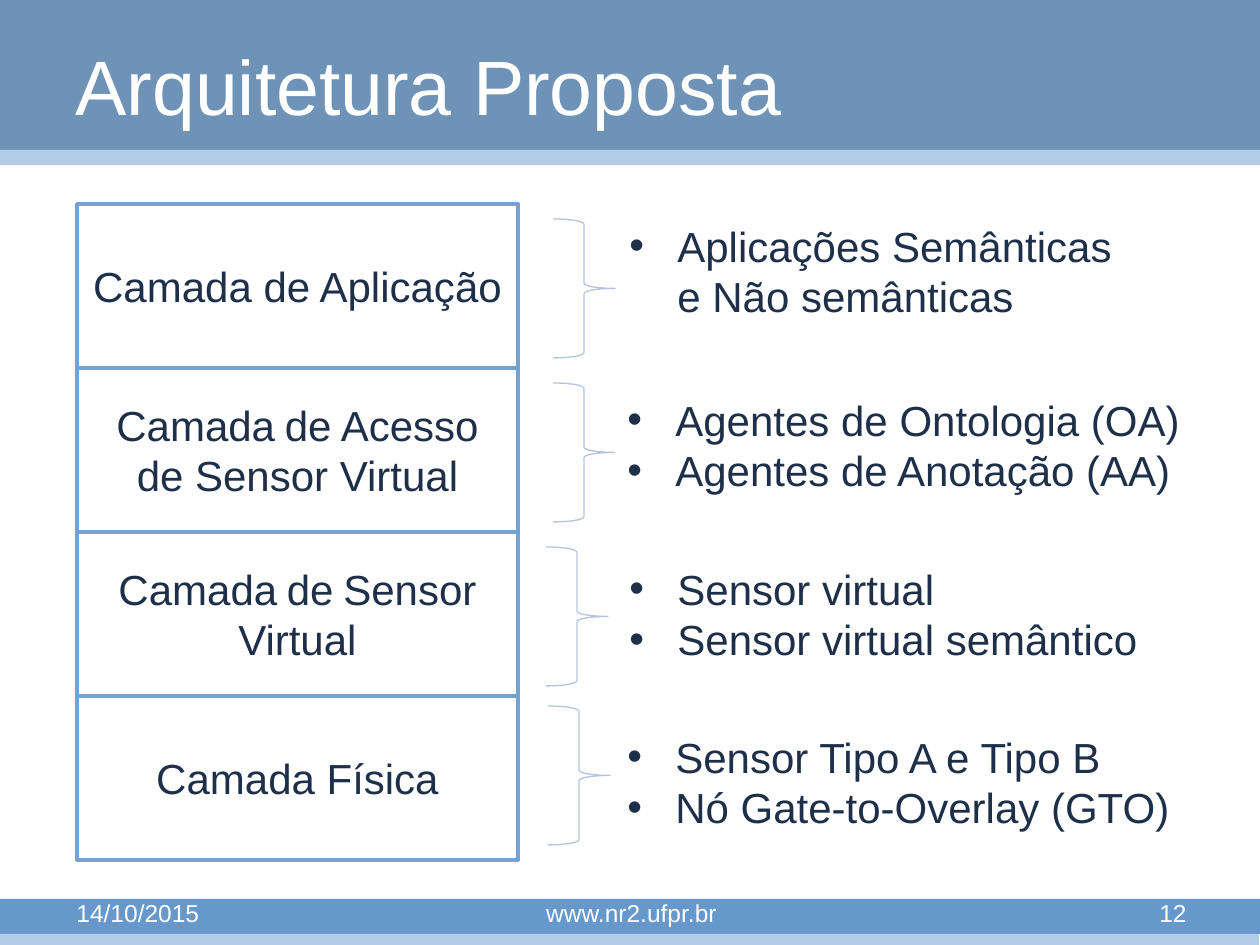
from dataclasses import dataclass

from lxml.etree import SubElement
from pptx import Presentation
from pptx.dml.color import RGBColor as Rgb
from pptx.enum.shapes import MSO_SHAPE as Shape
from pptx.enum.text import MSO_ANCHOR as Anchor, MSO_AUTO_SIZE as Fit, PP_ALIGN as Align
from pptx.oxml.ns import qn
from pptx.util import Emu, Pt

SCALE = 914400 / 126
FONT = "Arial"
HEX = {
    "head": "336599", "pale": "B3CCE6", "foot": "6698CC", "white": "FFFFFF",
    "edge": "75A2D1", "ink": "1E3049", "brace": "B3C5DE",
}


@dataclass
class Box:
    x: int
    y: int
    w: int
    h: int


@dataclass
class Band:
    box: Box
    fill: str
    alpha: int = 100


@dataclass
class Layer:
    name: str
    brace: Box
    notes: Box
    items: list[str]


@dataclass
class Label:
    text: str
    box: Box
    size: int
    align: Align
    anchor: Anchor


BANDS = [
    Band(Box(0, 0, 1260, 165), "head", 70),
    Band(Box(0, 150, 1260, 15), "pale"),
    Band(Box(0, 899, 1261, 35), "foot"),
    Band(Box(0, 934, 1259, 11), "pale"),
]
LABELS = [
    Label("Arquitetura Proposta", Box(63, 35, 1143, 100), 44, Align.LEFT, Anchor.MIDDLE),
    Label("14/10/2015", Box(64, 892, 295, 40), 14, Align.LEFT, Anchor.TOP),
    Label("www.nr2.ufpr.br", Box(432, 892, 399, 44), 14, Align.CENTER, Anchor.TOP),
    Label("12", Box(904, 892, 295, 44), 14, Align.RIGHT, Anchor.TOP),
]
LAYERS = [
    Layer("Camada de Aplicação", Box(553, 219, 62, 139), Box(617, 214, 519, 115),
          ["Aplicações Semânticas e Não semânticas"]),
    Layer("Camada~de Acesso de Sensor Virtual", Box(553, 383, 62, 139), Box(615, 388, 615, 115),
          ["Agentes de Ontologia (OA)", "Agentes de Anotação (AA)"]),
    Layer("Camada~de~Sensor~Virtual", Box(546, 547, 62, 139), Box(617, 557, 558, 115),
          ["Sensor virtual", "Sensor virtual semântico"]),
    Layer("Camada Física", Box(548, 706, 62, 139), Box(615, 725, 581, 115),
          ["Sensor Tipo A e Tipo B", "Nó Gate-to-Overlay (GTO)"]),
]
LEFT, TOP, WIDTH, STEP = 77, 204, 441, 164
INDENT = 48


def px(n: int) -> Emu:
    return Emu(round(n * SCALE))


def place(box: Box) -> tuple[Emu, ...]:
    return px(box.x), px(box.y), px(box.w), px(box.h)


def tint(name: str) -> Rgb:
    return Rgb.from_string(HEX[name])


def draw(slide, kind: Shape, box: Box, fill: str = "", line: str = "", width: float = 1):
    shape = slide.shapes.add_shape(kind, *place(box))
    shape.shadow.inherit = False
    if fill:
        shape.fill.solid()
        shape.fill.fore_color.rgb = tint(fill)
    else:
        shape.fill.background()
    if line:
        shape.line.color.rgb = tint(line)
        shape.line.width = Pt(width)
    else:
        shape.line.fill.background()
    return shape


def fade(shape, alpha: int) -> None:
    color = shape.fill._xPr.find(qn("a:solidFill"))[0]
    SubElement(color, qn("a:alpha")).set("val", str(alpha * 1000))


def dot(para) -> None:
    props = para._p.get_or_add_pPr()
    props.set("marL", str(px(INDENT)))
    props.set("indent", str(-px(INDENT)))
    SubElement(props, qn("a:buFont")).set("typeface", FONT)
    SubElement(props, qn("a:buChar")).set("char", "•")


def add_run(para, text: str, size: int, color: str) -> None:
    run = para.add_run()
    run.text = text
    run.font.name = FONT
    run.font.size = Pt(size)
    run.font.color.rgb = tint(color)


def write(shape, *lines: str, size: int = 24, color: str = "ink", align: Align = Align.LEFT,
          anchor: Anchor = Anchor.TOP, bullet: bool = False, grow: bool = False) -> None:
    frame = shape.text_frame
    frame.word_wrap = True
    frame.vertical_anchor = anchor
    if grow:
        frame.auto_size = Fit.SHAPE_TO_FIT_TEXT
    for i, line in enumerate(lines):
        para = frame.add_paragraph() if i else frame.paragraphs[0]
        para.alignment = align
        if bullet:
            dot(para)
        for j, part in enumerate(line.split("~")):
            if j:
                add_run(para, " ", 20, "pale")
            add_run(para, part, size, color)


def main() -> None:
    deck = Presentation()
    deck.slide_width, deck.slide_height = px(1260), px(945)
    slide = deck.slides.add_slide(deck.slide_layouts[6])
    for band in BANDS:
        shape = draw(slide, Shape.RECTANGLE, band.box, fill=band.fill)
        if band.alpha < 100:
            fade(shape, band.alpha)
    for label in LABELS:
        write(slide.shapes.add_textbox(*place(label.box)), label.text, size=label.size,
              color="white", align=label.align, anchor=label.anchor)
    for i, layer in enumerate(LAYERS):
        box = Box(LEFT, TOP + i * STEP, WIDTH, STEP)
        card = draw(slide, Shape.RECTANGLE, box, fill="white", line="edge", width=2)
        write(card, layer.name, align=Align.CENTER, anchor=Anchor.MIDDLE)
        draw(slide, Shape.RIGHT_BRACE, layer.brace, line="brace", width=0.75)
        write(slide.shapes.add_textbox(*place(layer.notes)), *layer.items,
              bullet=True, grow=True)
    deck.save("out.pptx")


if __name__ == "__main__":
    main()
